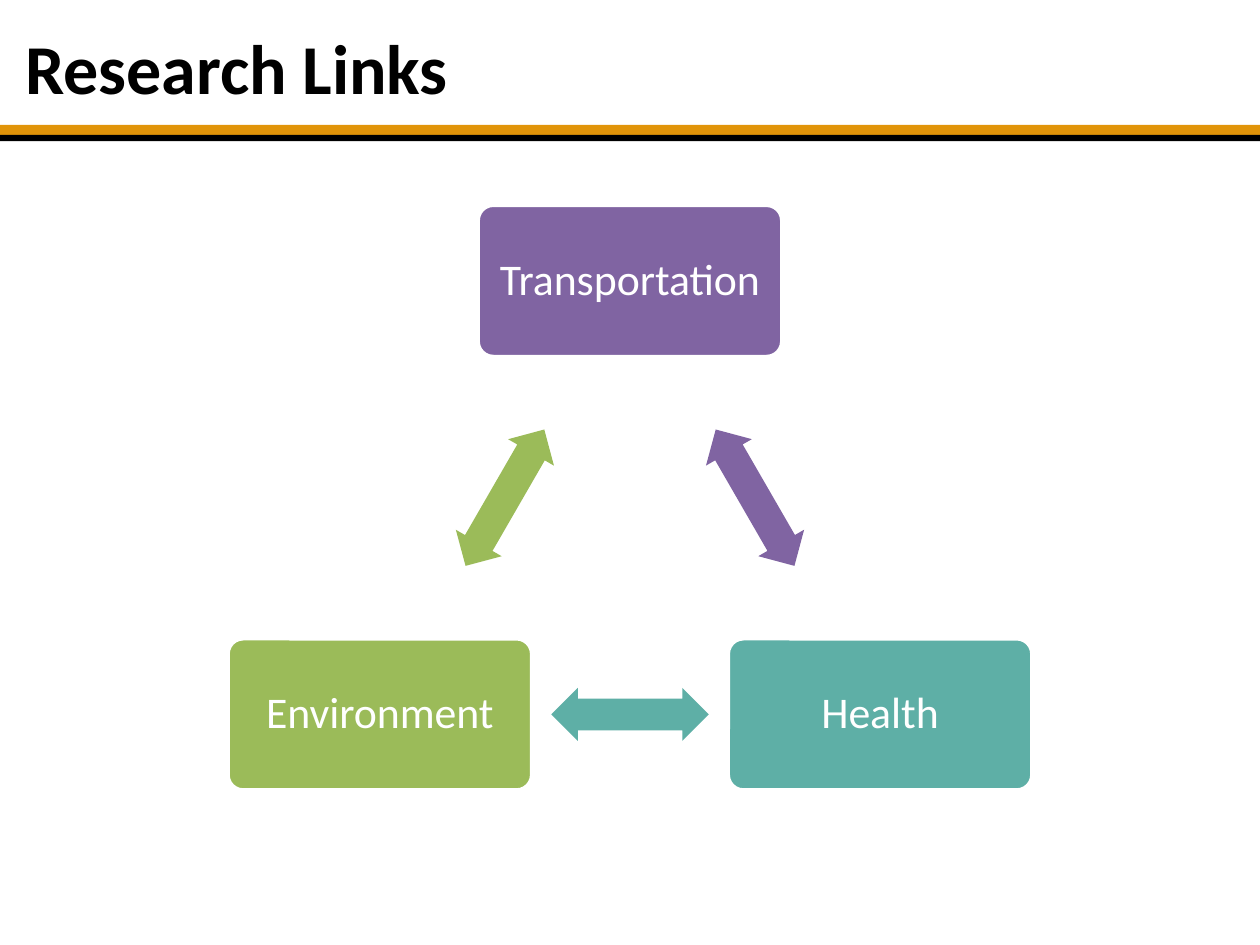
from dataclasses import dataclass

from pptx import Presentation
from pptx.dml.color import RGBColor
from pptx.enum.shapes import MSO_SHAPE
from pptx.enum.text import MSO_ANCHOR, MSO_AUTO_SIZE, PP_ALIGN
from pptx.util import Inches, Pt

RECTANGLE = MSO_SHAPE.RECTANGLE
ROUNDED = MSO_SHAPE.ROUNDED_RECTANGLE
DOUBLE_ARROW = MSO_SHAPE.LEFT_RIGHT_ARROW
MIDDLE = MSO_ANCHOR.MIDDLE
NO_AUTOFIT = MSO_AUTO_SIZE.NONE
LEFT, CENTER = PP_ALIGN.LEFT, PP_ALIGN.CENTER
TITLE_ONLY = 5


@dataclass(frozen=True)
class Theme:
    """Colours, font and type sizes of the deck."""
    font: str = "Calibri"
    title_size: int = 40
    label_size: int = 25
    black: str = "000000"
    white: str = "FFFFFF"
    orange: str = "E19409"
    purple: str = "8064A2"
    teal: str = "5EAFA6"
    green: str = "9BBB59"


THEME = Theme()


def add_block(page, kind, box, color):
    """Add a flat, borderless preset shape in a box given in inches."""
    shape = page.shapes.add_shape(kind, *map(Inches, box))
    shape.shadow.inherit = False
    shape.fill.solid()
    shape.fill.fore_color.rgb = RGBColor.from_string(color)
    shape.line.fill.background()
    return shape


def write_text(frame, text, size, color, align, bold=False):
    """Write one formatted paragraph, centred vertically in its frame."""
    frame.word_wrap = True
    frame.auto_size = NO_AUTOFIT
    frame.vertical_anchor = MIDDLE
    para = frame.paragraphs[0]
    para.alignment = align
    span = para.add_run()
    span.text = text
    span.font.name = THEME.font
    span.font.size = Pt(size)
    span.font.bold = bold
    span.font.color.rgb = RGBColor.from_string(color)
    return para


def add_header(page, box, text):
    """Place the title and the two-colour rule along the foot of the box."""
    left, top, width, height = box
    orange_height, black_height = 0.08, 0.05
    rule_top = top + height - orange_height - black_height
    add_block(page, RECTANGLE, (left, rule_top, width, orange_height), THEME.orange)
    add_block(page, RECTANGLE,
              (left, rule_top + orange_height, width, black_height), THEME.black)
    title = page.shapes.title
    title.left, title.top = Inches(left + 0.1), Inches(top - 0.1)
    title.width, title.height = Inches(width - 1), Inches(1.25)
    write_text(title.text_frame, text, THEME.title_size, THEME.black, LEFT, bold=True)


def add_node(page, center, size, text, color):
    """Add a labelled rounded box around a centre point."""
    width, height = size
    box = (center[0] - width / 2, center[1] - height / 2, width, height)
    node = add_block(page, ROUNDED, box, color)
    node.adjustments[0] = 0.1
    node.line.color.rgb = RGBColor.from_string(THEME.white)
    node.line.width = Pt(2)
    frame = node.text_frame
    frame.margin_left = frame.margin_right = Inches(0.1)
    frame.margin_top = frame.margin_bottom = Inches(0.1)
    para = write_text(frame, text, THEME.label_size, THEME.white, CENTER)
    para.line_spacing = 0.9


def add_link(page, start, end, angle, color):
    """Add a double arrow halfway between two centre points."""
    width, height = 1.25, 0.42
    middle_x, middle_y = (start[0] + end[0]) / 2, (start[1] + end[1]) / 2
    box = (middle_x - width / 2, middle_y - height / 2, width, height)
    arrow = add_block(page, DOUBLE_ARROW, box, color)
    arrow.adjustments[0] = 0.6
    arrow.adjustments[1] = 0.5
    arrow.rotation = angle


def add_triangle_cycle(page, box, items):
    """Place three nodes at the corners of a triangle filling the box and link them."""
    left, top, width, height = box
    node_width, node_height = 2.41, 1.2
    first_y, last_y = top + node_height / 2, top + height - node_height / 2
    centers = [
        (left + width / 2, first_y),
        (left + width - node_width / 2, last_y),
        (left + node_width / 2, last_y),
    ]
    for index, (text, color) in enumerate(items):
        start, end = centers[index], centers[(index + 1) % len(centers)]
        add_node(page, start, (node_width, node_height), text, color)
        add_link(page, start, end, 60 + 120 * index, color)


def main():
    """Build and save the deck."""
    deck = Presentation()
    deck.slide_width, deck.slide_height = Inches(10), Inches(7.5)
    page = deck.slides.add_slide(deck.slide_layouts[TITLE_ONLY])
    add_header(page, (0, 0, 10, 1.12), "Research Links")
    add_triangle_cycle(page, (1.81, 1.63, 6.38, 4.64), [
        ("Transportation", THEME.purple),
        ("Health", THEME.teal),
        ("Environment", THEME.green),
    ])
    deck.save("out.pptx")


if __name__ == "__main__":
    main()
